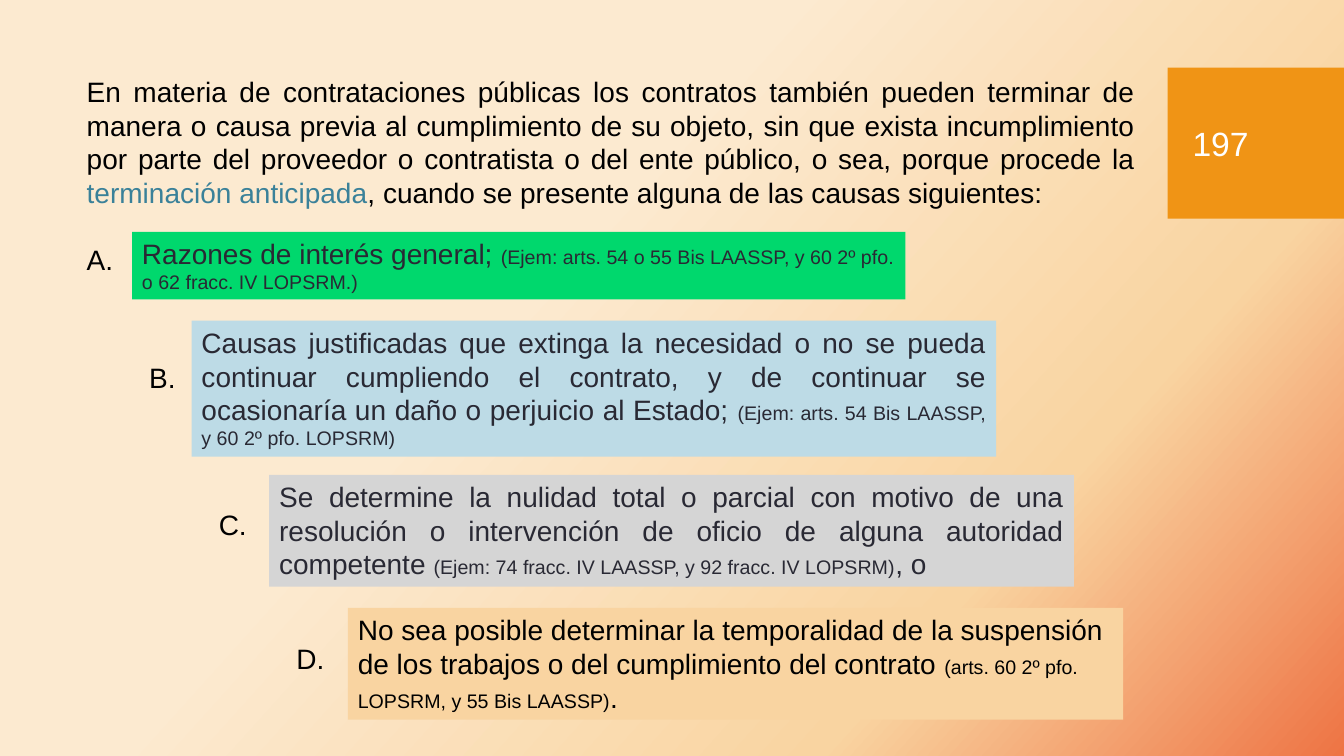
from lxml import etree
from pptx import Presentation
from pptx.dml.color import RGBColor
from pptx.enum.shapes import MSO_SHAPE
from pptx.enum.text import MSO_ANCHOR, MSO_AUTO_SIZE, PP_ALIGN
from pptx.oxml.ns import qn
from pptx.util import Inches, Pt

RECTANGLE = MSO_SHAPE.RECTANGLE
LEFT, JUSTIFY = PP_ALIGN.LEFT, PP_ALIGN.JUSTIFY
TOP, MIDDLE = MSO_ANCHOR.TOP, MSO_ANCHOR.MIDDLE
FONT = "Arial"
COLORS = {
    "cream": "FCEAD0", "sand": "F9D4A1", "coral": "EE7444",
    "orange": "F09415", "green": "00D86D", "blue": "BDDBE6",
    "gray": "D5D5D5", "teal": "3A8199", "ink": "292934",
    "black": "000000", "white": "FFFFFF",
}


def add_run(paragraph, text, size, color):
    run = paragraph.add_run()
    run.text = text
    run.font.name = FONT
    run.font.size = Pt(size)
    run.font.color.rgb = RGBColor.from_string(COLORS[color])


def add_rectangle(left, top, width, height, color):
    shape = slide.shapes.add_shape(
        RECTANGLE, Inches(left), Inches(top), Inches(width), Inches(height))
    shape.shadow.inherit = False
    shape.fill.solid()
    shape.fill.fore_color.rgb = RGBColor.from_string(COLORS[color])
    shape.line.fill.background()
    return shape


presentation = Presentation()
presentation.slide_width = Inches(13.33)
presentation.slide_height = Inches(7.5)
slide = presentation.slides.add_slide(presentation.slide_layouts[1])
title = slide.shapes.title.element
title.getparent().remove(title)

# Gradient background
slide.background.fill.gradient()
gradient = slide.element.find(".//" + qn("a:gradFill"))
stops = gradient.find(qn("a:gsLst"))
for stop in list(stops):
    stops.remove(stop)
for position, color in ((39, "cream"), (74, "sand"), (100, "coral")):
    stop = etree.SubElement(stops, qn("a:gs"), pos=str(position * 1000))
    etree.SubElement(stop, qn("a:srgbClr"), val=COLORS[color])
gradient.find(qn("a:lin")).set("ang", str(42 * 60000))

# Page number
add_rectangle(11.58, 0.67, 1.75, 1.5, "orange")
number_box = slide.shapes.add_textbox(
    Inches(11.73), Inches(0.82), Inches(1.26), Inches(1.19))
number_frame = number_box.text_frame
number_frame.word_wrap = True
number_frame.vertical_anchor = MIDDLE
add_run(number_frame.paragraphs[0], "197", 24, "white")

# Introduction and list letters: indent in inches, space before in points, runs
body_paragraphs = [
    (0, 0, [
        ("En materia de contrataciones públicas los contratos también pueden "
         "terminar de manera o causa previa al cumplimiento de su objeto, sin "
         "que exista incumplimiento por parte del proveedor o contratista o "
         "del ente público, o sea, porque procede la ", "black"),
        ("terminación anticipada", "teal"),
        (", cuando se presente alguna de las causas siguientes:", "black"),
    ]),
    (0, 24, [("A.", "black")]),
    (0.62, 60, [("B.", "black")]),
    (1.31, 81, [("C.", "black")]),
    (2.08, 72, [("D.", "black")]),
]
body = slide.placeholders[1]
body.left, body.top = Inches(0.76), Inches(0.69)
body.width, body.height = Inches(10.6), Inches(6.62)
body_frame = body.text_frame
body_frame.word_wrap = True
body_frame.auto_size = MSO_AUTO_SIZE.NONE
body_frame.vertical_anchor = TOP
for index, (indent, space_before, runs) in enumerate(body_paragraphs):
    paragraph = body_frame.add_paragraph() if index else body_frame.paragraphs[0]
    paragraph.alignment = JUSTIFY
    paragraph.line_spacing = Pt(24)
    paragraph.space_before = Pt(space_before)
    paragraph.space_after = Pt(0)
    properties = paragraph._p.get_or_add_pPr()
    properties.set("marL", str(Inches(indent)))
    properties.set("indent", "0")
    etree.SubElement(properties, qn("a:buNone"))
    for text, color in runs:
        add_run(paragraph, text, 20, color)

# Causes of early termination
causes = [
    ((1.31, 2.3, 7.67, 0.67), "green", "ink", LEFT, [
        ("Razones de interés general; ", 20),
        ("(Ejem: arts. 54 o 55 Bis LAASSP, y 60 2º pfo. o 62 fracc. IV "
         "LOPSRM.)", 14),
    ]),
    ((1.9, 3.18, 7.98, 1.35), "blue", "ink", JUSTIFY, [
        ("Causas justificadas que extinga la necesidad o no se pueda continuar "
         "cumpliendo el contrato, y de continuar se ocasionaría un daño o "
         "perjuicio al Estado; ", 20),
        ("(Ejem: arts. 54 Bis LAASSP, y 60 2º pfo. LOPSRM)", 14),
    ]),
    ((2.67, 4.71, 7.98, 1.11), "gray", "ink", JUSTIFY, [
        ("Se determine la nulidad total o parcial con motivo de una resolución "
         "o intervención de oficio de alguna autoridad competente ", 20),
        ("(Ejem: 74 fracc. IV LAASSP, y 92 fracc. IV LOPSRM)", 14),
        (", o", 20),
    ]),
    ((3.45, 6.03, 7.69, 1.11), "sand", "black", LEFT, [
        ("No sea posible determinar la temporalidad de la suspensión de los "
         "trabajos o del cumplimiento del contrato ", 20),
        ("(arts. 60 2º pfo. LOPSRM, y 55 Bis LAASSP)", 14),
        (".", 20),
    ]),
]
for bounds, fill_color, text_color, alignment, runs in causes:
    cause_box = add_rectangle(*bounds, fill_color)
    cause_frame = cause_box.text_frame
    cause_frame.word_wrap = True
    cause_frame.auto_size = MSO_AUTO_SIZE.SHAPE_TO_FIT_TEXT
    cause_frame.vertical_anchor = TOP
    paragraph = cause_frame.paragraphs[0]
    paragraph.alignment = alignment
    for text, size in runs:
        add_run(paragraph, text, size, text_color)

presentation.save("out.pptx")
